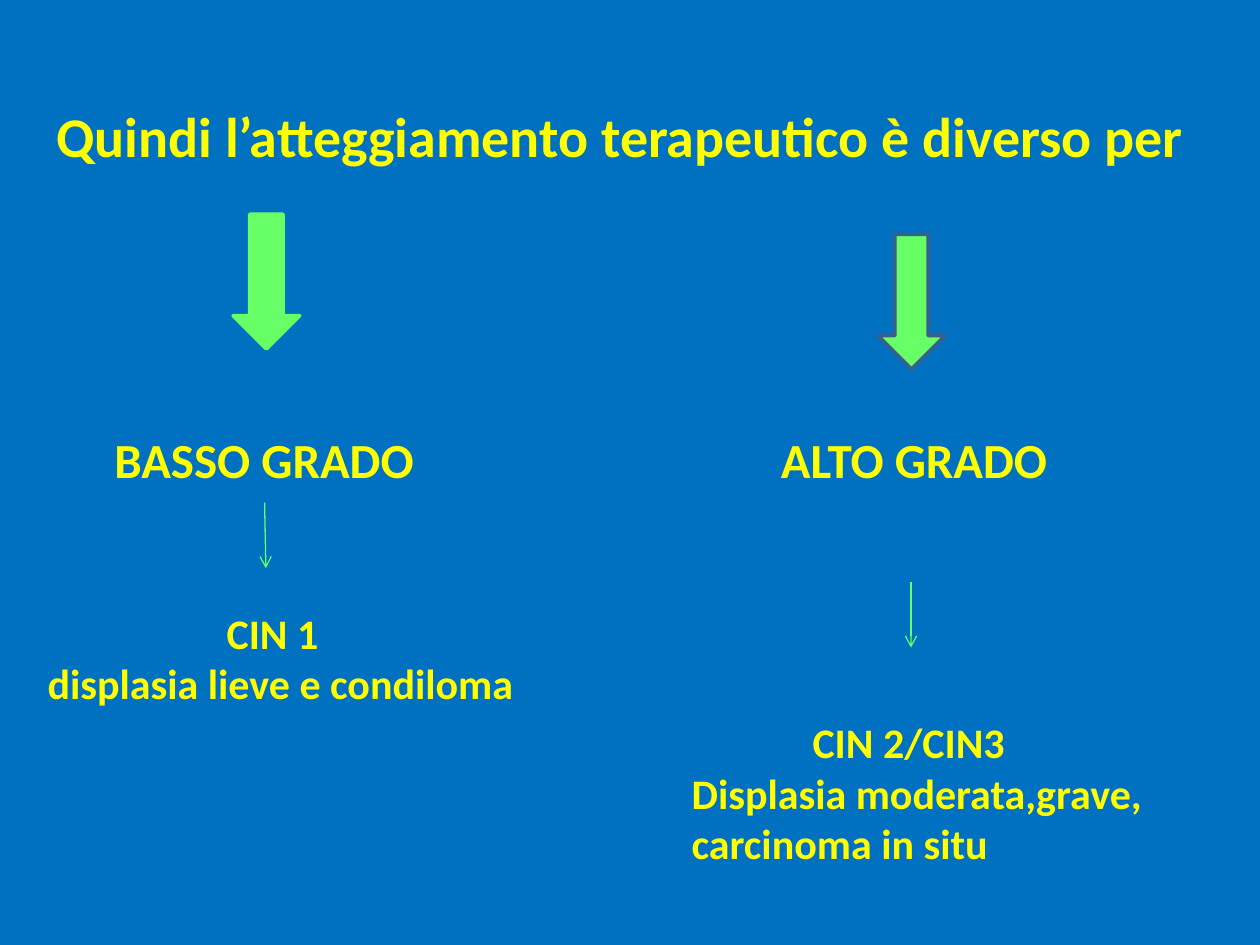
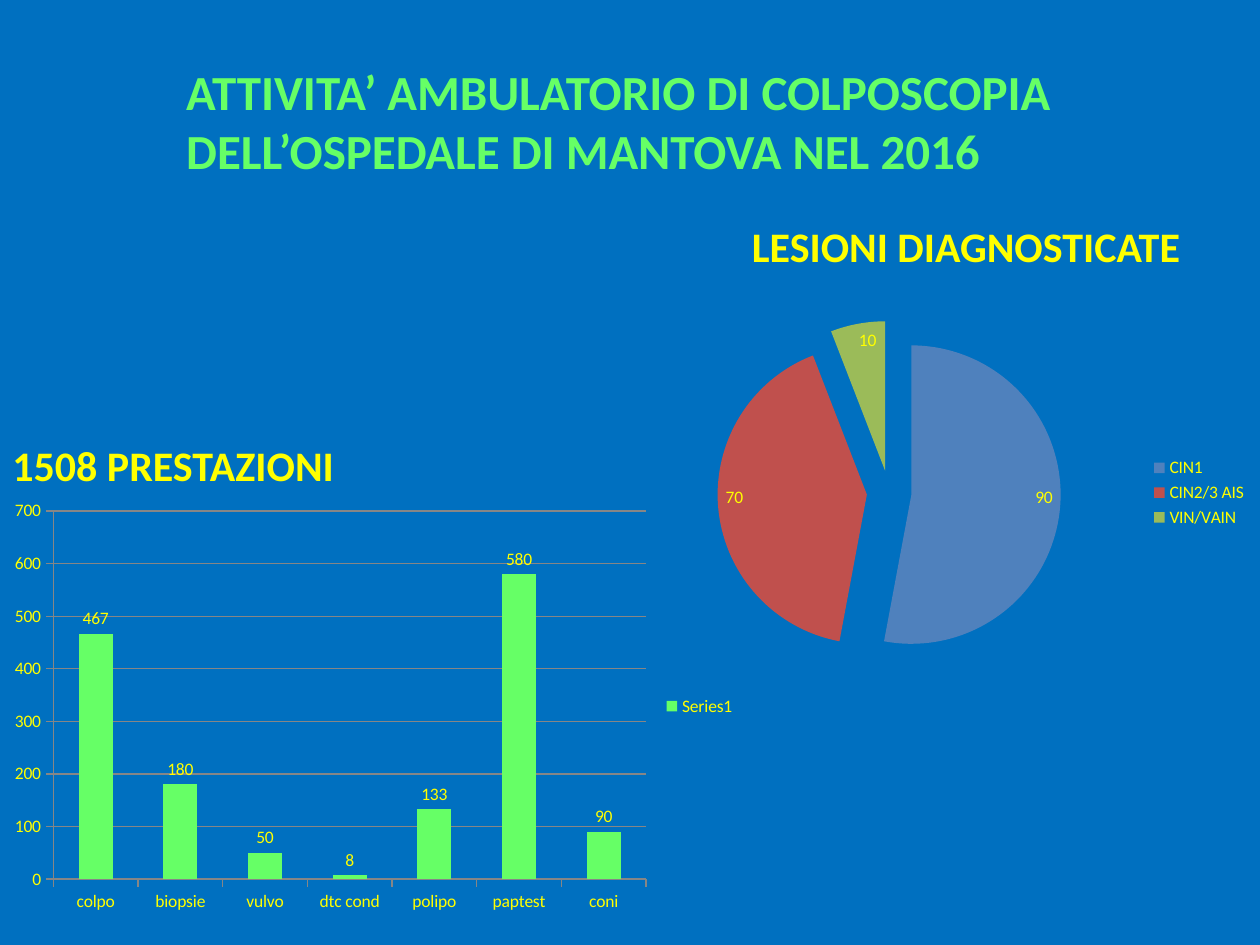
import pptx
import pptx.chart.data
import pptx.dml.color
import pptx.enum.chart
import pptx.enum.shapes
import pptx.oxml
import pptx.oxml.ns
import pptx.util

SCALE = 9144
FONT = "Calibri"
BLUE, YELLOW, GREEN = "0070C0", "FFFF00", "66FF66"
SLATE, GREY = "3A5F8C", "868686"
PIE_COLORS = ["4F81BD", "C0504D", "9BBB59"]


def px(length):
    return pptx.util.Emu(length * SCALE)


def color(value):
    return pptx.dml.color.RGBColor.from_string(value)


def element(tag, **attributes):
    node = pptx.oxml.parse_xml(f"<{tag} {pptx.oxml.ns.nsdecls(tag.split(':')[0])}/>")
    for name, value in attributes.items():
        node.set(name, str(value))
    return node


class Deck:
    """Hold the shared style and the slide being built."""

    def __init__(self):
        self.deck = pptx.Presentation()
        self.deck.slide_width, self.deck.slide_height = px(1000), px(750)
        self.page = None

    def add_page(self):
        self.page = self.deck.slides.add_slide(self.deck.slide_layouts[6])
        fill = self.page.background.fill
        fill.solid()
        fill.fore_color.rgb = color(BLUE)

    def style_font(self, font, size, shade, bold=False):
        font.name, font.size, font.bold = FONT, pptx.util.Pt(size), bold
        font.color.rgb = color(shade)

    def text(self, left, top, width, height, lines, size, shade=YELLOW, first_indent=0, wrap=False):
        box = self.page.shapes.add_textbox(px(left), px(top), px(width), px(height))
        frame = box.text_frame
        frame.word_wrap = wrap
        for number, line in enumerate(lines):
            para = frame.add_paragraph() if number else frame.paragraphs[0]
            if number == 0 and first_indent:
                para._p.get_or_add_pPr().set("marL", str(px(first_indent)))
            span = para.add_run()
            span.text = line
            self.style_font(span.font, size, shade, True)

    def block_arrow(self, left, top, outline):
        arrow = self.page.shapes.add_shape(
            pptx.enum.shapes.MSO_SHAPE.DOWN_ARROW, px(left), px(top), px(53), px(107))
        arrow.shadow.inherit = False
        arrow.fill.solid()
        arrow.fill.fore_color.rgb = color(GREEN)
        arrow.line.color.rgb = color(outline)
        arrow.line.width = pptx.util.Pt(2)

    def thin_arrow(self, start_x, start_y, end_x, end_y):
        arrow = self.page.shapes.add_connector(
            pptx.enum.shapes.MSO_CONNECTOR.STRAIGHT,
            px(start_x), px(start_y), px(end_x), px(end_y))
        arrow.line.color.rgb = color(GREEN)
        arrow.line.width = pptx.util.Pt(0.75)
        properties = arrow.element.spPr
        properties.find(pptx.oxml.ns.qn("a:ln")).append(element("a:tailEnd", type="arrow"))
        properties.append(element("a:effectLst"))

    def chart(self, kind, left, top, width, height, name, values, label_position):
        data = pptx.chart.data.CategoryChartData()
        data.categories = list(values)
        data.add_series(name, list(values.values()))
        chart = self.page.shapes.add_chart(
            kind, px(left), px(top), px(width), px(height), data).chart
        self.style_font(chart.font, 10, YELLOW)
        chart.has_title = False
        chart.has_legend = True
        chart.legend.position = pptx.enum.chart.XL_LEGEND_POSITION.RIGHT
        chart.legend.include_in_layout = False
        self.style_font(chart.legend.font, 10, YELLOW)
        plot = chart.plots[0]
        plot.has_data_labels = True
        labels = plot.data_labels
        labels.show_value = True
        labels.position = label_position
        self.style_font(labels.font, 10, YELLOW)
        return chart

    def column_chart(self, left, top, width, height, name, values):
        chart = self.chart(
            pptx.enum.chart.XL_CHART_TYPE.COLUMN_CLUSTERED, left, top, width, height,
            name, values, pptx.enum.chart.XL_LABEL_POSITION.OUTSIDE_END)
        plot = chart.plots[0]
        plot.vary_by_categories = False
        plot.gap_width = 150
        fill = plot.series[0].format.fill
        fill.solid()
        fill.fore_color.rgb = color(GREEN)
        for axis in (chart.category_axis, chart.value_axis):
            self.style_font(axis.tick_labels.font, 10, YELLOW)
            axis.format.line.color.rgb = color(GREY)
        scale = chart.value_axis
        scale.minimum_scale, scale.maximum_scale, scale.major_unit = 0, 700, 100
        scale.major_gridlines.format.line.color.rgb = color(GREY)

    def pie_chart(self, left, top, width, height, name, values, explosion):
        chart = self.chart(
            pptx.enum.chart.XL_CHART_TYPE.PIE, left, top, width, height,
            name, values, pptx.enum.chart.XL_LABEL_POSITION.INSIDE_END)
        plot = chart.plots[0]
        plot.vary_by_categories = True
        series = plot.series[0]
        series._element.find(pptx.oxml.ns.qn("c:tx")).addnext(
            element("c:explosion", val=explosion))
        for number, shade in enumerate(PIE_COLORS):
            fill = series.points[number].format.fill
            fill.solid()
            fill.fore_color.rgb = color(shade)


def build_treatment(deck):
    deck.add_page()
    deck.text(81, 336, 317, 57, ["BASSO GRADO"], 28, wrap=True)
    deck.text(610, 336, 243, 57, ["ALTO GRADO"], 28)
    deck.text(28, 477, 500, 91, ["CIN 1", "displasia lieve e condiloma"], 24,
              first_indent=142, wrap=True)
    deck.text(35, 76, 965, 64, ["Quindi l’atteggiamento terapeutico è diverso per"], 32, wrap=True)
    deck.text(539, 564, 389, 131,
              ["CIN 2/CIN3", "Displasia moderata,grave,", "carcinoma in situ"], 24, first_indent=96)
    deck.block_arrow(185, 170, GREEN)
    deck.block_arrow(697, 186, SLATE)
    deck.thin_arrow(210, 399, 211, 451)
    deck.thin_arrow(723, 462, 723, 514)


def build_activity(deck):
    deck.add_page()
    deck.text(138, 44, 723, 104,
              ["ATTIVITA’ AMBULATORIO DI COLPOSCOPIA", "DELL’OSPEDALE DI MANTOVA NEL 2016"],
              28, GREEN)
    deck.text(0, 344, 278, 50, ["1508 PRESTAZIONI"], 24)
    deck.column_chart(0, 391, 594, 339, "Series1", {
        "colpo": 467, "biopsie": 180, "vulvo": 50, "dtc cond": 8,
        "polipo": 133, "paptest": 580, "coni": 90})
    deck.pie_chart(500, 241, 500, 300, "Series 1",
                   {"CIN1": 90, "CIN2/3 AIS": 70, "VIN/VAIN": 10}, explosion=15)
    deck.text(587, 170, 363, 50, ["LESIONI DIAGNOSTICATE"], 24)


def main():
    deck = Deck()
    build_treatment(deck)
    build_activity(deck)
    deck.deck.save("out.pptx")


if __name__ == "__main__":
    main()
